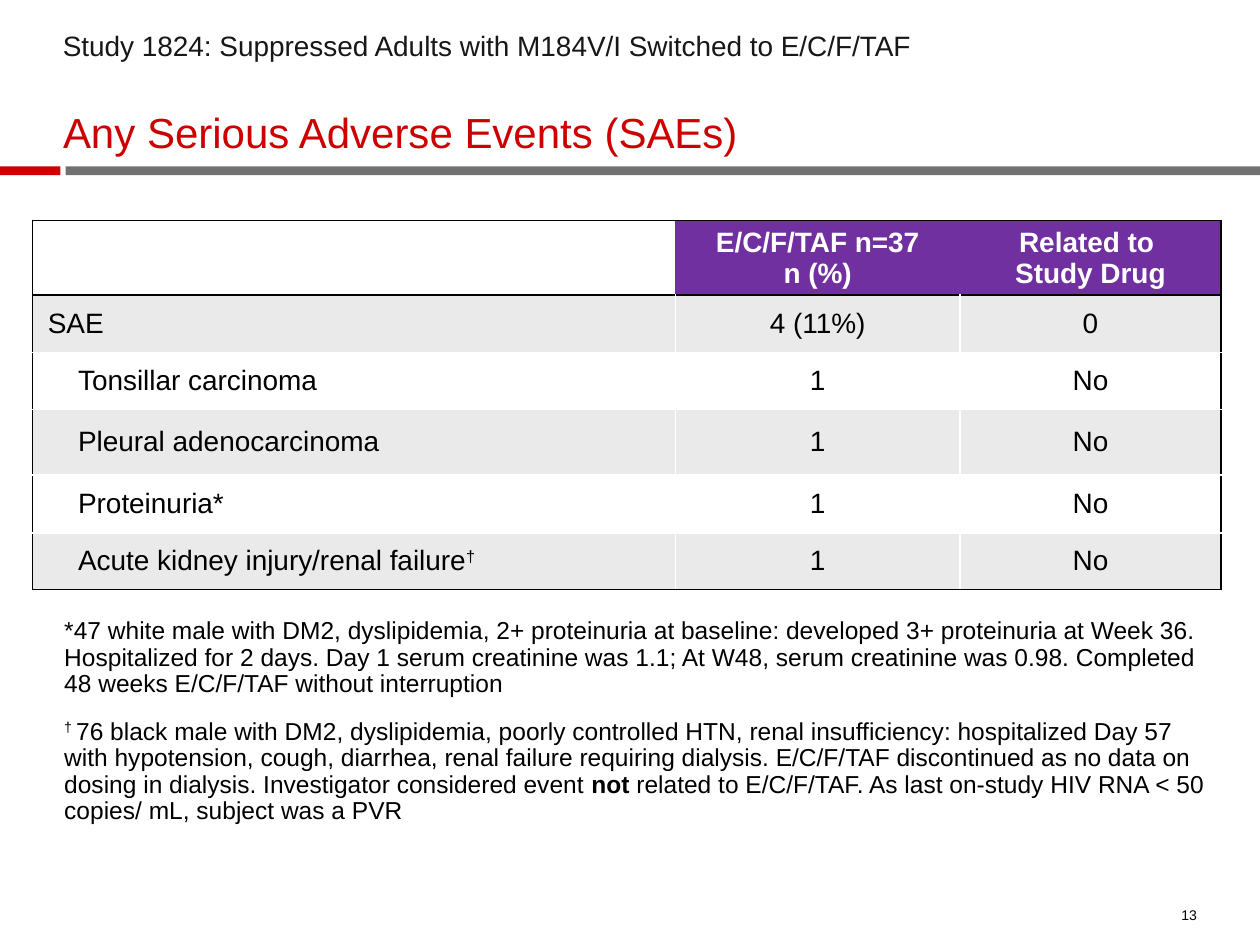
import pptx
import pptx.dml.color
import pptx.enum.shapes
import pptx.enum.text
import pptx.oxml
import pptx.oxml.ns
import pptx.util

COLORS = {
    "red": "CC0000", "gray": "717171", "purple": "7030A0", "band": "EAEAEA",
    "white": "FFFFFF", "black": "000000", "charcoal": "171717",
}
ALIGN = pptx.enum.text.PP_ALIGN
ANCHOR = pptx.enum.text.MSO_ANCHOR


class SlideBuilder:
    """Holds the style and the slide; lengths are cells of a 100 by 75 grid."""

    font = "Arial"
    columns, rows = 100, 75

    def __init__(self, presentation):
        self.cell_width = presentation.slide_width / self.columns
        self.cell_height = presentation.slide_height / self.rows
        self.slide = presentation.slides.add_slide(presentation.slide_layouts[1])

    def across(self, count):
        return round(count * self.cell_width)

    def down(self, count):
        return round(count * self.cell_height)

    def box(self, left, top, width, height):
        return self.across(left), self.down(top), self.across(width), self.down(height)

    def color(self, name):
        return pptx.dml.color.RGBColor.from_string(COLORS[name])

    def fill_text(self, frame, text, size, color, align=ALIGN.LEFT, bold=False,
                  spacing=None, before=0):
        """Fill a frame; a paragraph is a string or a list of (words, style) runs."""
        paragraphs = [text] if isinstance(text, str) else text
        for index, runs in enumerate(paragraphs):
            paragraph = frame.paragraphs[0] if index == 0 else frame.add_paragraph()
            paragraph.alignment = align
            paragraph.space_before = pptx.util.Pt(before)
            if spacing:
                paragraph.line_spacing = spacing
            if isinstance(runs, str):
                paragraph.text = runs
            else:
                for words, style in runs:
                    run = paragraph.add_run()
                    run.text = words
                    if style == "bold":
                        run.font.bold = True
                    elif style == "superscript":
                        run._r.get_or_add_rPr().set("baseline", "30000")
            for run in paragraph.runs:
                run.font.name = self.font
                run.font.size = pptx.util.Pt(size)
                run.font.bold = bold or run.font.bold
                run.font.color.rgb = self.color(color)

    def prepare(self, frame, anchor, inset=0):
        frame.word_wrap = True
        frame.auto_size = pptx.enum.text.MSO_AUTO_SIZE.NONE
        frame.vertical_anchor = anchor
        frame.margin_left = frame.margin_right = self.across(inset)
        frame.margin_top = frame.margin_bottom = self.down(inset / 2)

    def placeholder(self, index, area, text, anchor, **style):
        shape = self.slide.placeholders[index]
        shape.left, shape.top, shape.width, shape.height = self.box(*area)
        self.prepare(shape.text_frame, anchor)
        self.fill_text(shape.text_frame, text, **style)
        for paragraph in shape.text_frame.paragraphs:
            properties = paragraph._p.get_or_add_pPr()
            properties.set("marL", "0")
            properties.set("indent", "0")
            properties.append(pptx.oxml.parse_xml(
                f'<a:buNone {pptx.oxml.ns.nsdecls("a")}/>'))

    def text(self, area, text, anchor=ANCHOR.TOP, inset=0, **style):
        frame = self.slide.shapes.add_textbox(*self.box(*area)).text_frame
        self.prepare(frame, anchor, inset)
        self.fill_text(frame, text, **style)

    def bar(self, area, color):
        shape = self.slide.shapes.add_shape(
            pptx.enum.shapes.MSO_SHAPE.RECTANGLE, *self.box(*area))
        shape.shadow.inherit = False
        shape.fill.solid()
        shape.fill.fore_color.rgb = self.color(color)
        shape.line.fill.background()

    def borders(self, cell, left, right, top, bottom):
        properties = cell._tc.get_or_add_tcPr()
        for index, (side, color) in enumerate(zip("LRTB", (left, right, top, bottom))):
            paint = (f'<a:solidFill><a:srgbClr val="{COLORS[color]}"/></a:solidFill>'
                     if color else "<a:noFill/>")
            properties.insert(index, pptx.oxml.parse_xml(
                f'<a:ln{side} {pptx.oxml.ns.nsdecls("a")} w="12700">{paint}</a:ln{side}>'))

    def table(self, left, top, widths, heights, content):
        last_row, last_column = len(heights) - 1, len(widths) - 1
        table = self.slide.shapes.add_table(
            len(heights), len(widths),
            *self.box(left, top, sum(widths), sum(heights))).table
        table.first_row = table.horz_banding = False
        for column, width in zip(table.columns, widths):
            column.width = self.across(width)
        for row, height in zip(table.rows, heights):
            row.height = self.down(height)

        for row, values in enumerate(content):
            for column, value in enumerate(values):
                cell = table.cell(row, column)
                header, label = row == 0, column == 0
                fill = "band" if row % 2 else "white"
                if header and not label:
                    fill = "purple"
                cell.fill.solid()
                cell.fill.fore_color.rgb = self.color(fill)
                cell.vertical_anchor = ANCHOR.BOTTOM if header else ANCHOR.MIDDLE
                cell.margin_top = cell.margin_bottom = self.down(0.4 if header else 0)
                cell.margin_right = self.across(0)
                # Event names are indented under the SAE total
                indent = 0 if not label else 1.2 if row == 1 else 3.6
                cell.margin_left = self.across(indent)
                self.fill_text(cell.text_frame, value, size=16, bold=header,
                               color="white" if header else "black",
                               align=ALIGN.LEFT if label else ALIGN.CENTER)
                inner = None if header else "white"
                self.borders(
                    cell,
                    left="black" if label else inner,
                    right="black" if column == last_column else inner,
                    top="black" if row <= 1 else "white",
                    bottom="black" if row in (0, last_row) else "white")


def main():
    presentation = pptx.Presentation()
    presentation.slide_width = pptx.util.Inches(10)
    presentation.slide_height = pptx.util.Inches(7.5)
    builder = SlideBuilder(presentation)

    # Heading with its two-colour rule
    builder.bar((5.2, 13.2, 94.8, 0.7), "gray")
    builder.bar((0, 13.2, 4.8, 0.7), "red")
    builder.text((4, 2.1, 90, 3.3),
                 "Study 1824: Suppressed Adults with M184V/I Switched to E/C/F/TAF",
                 inset=1, size=16, color="charcoal", spacing=0.9)
    builder.placeholder(0, (5, 5.1, 90, 7.4), "Any Serious Adverse Events (SAEs)",
                        ANCHOR.BOTTOM, size=24, color="red", spacing=0.9)

    # Adverse event table
    renal_failure = [[("Acute kidney injury/renal failure", None), ("†", "superscript")]]
    builder.table(
        2.6, 17.5, widths=(51, 22.6, 20.7), heights=(5.9, 4.6, 4.5, 5.2, 4.6, 4.5),
        content=[
            ("", ["E/C/F/TAF n=37", "n (%)"], "Related to \vStudy Drug"),
            ("SAE", "4 (11%)", "0"),
            ("Tonsillar carcinoma", "1", "No"),
            ("Pleural adenocarcinoma", "1", "No"),
            ("Proteinuria*", "1", "No"),
            (renal_failure, "1", "No"),
        ])

    # Case notes
    notes = [
        "*47 white male with DM2, dyslipidemia, 2+ proteinuria at baseline: developed "
        "3+ proteinuria at Week 36. Hospitalized for 2 days. Day 1 serum creatinine was "
        "1.1; At W48, serum creatinine was 0.98. Completed 48 weeks E/C/F/TAF without "
        "interruption",
        [("† ", "superscript"),
         ("76 black male with DM2, dyslipidemia, poorly controlled HTN, renal "
          "insufficiency: hospitalized Day 57 with hypotension, cough, diarrhea, renal "
          "failure requiring dialysis. E/C/F/TAF discontinued as no data on dosing in "
          "dialysis. Investigator considered event ", None),
         ("not", "bold"),
         (" related to E/C/F/TAF. As last on-study HIV RNA < 50 copies/ mL, subject "
          "was a PVR", None)],
    ]
    builder.placeholder(1, (5.1, 49.1, 90.6, 17.6), notes, ANCHOR.TOP,
                        size=14, color="black", spacing=0.9, before=12)

    # Page number
    builder.text((92.3, 71.5, 2.7, 1.8), "13", ANCHOR.BOTTOM,
                 size=8, color="black", align=ALIGN.RIGHT)

    presentation.save("out.pptx")


if __name__ == "__main__":
    main()
